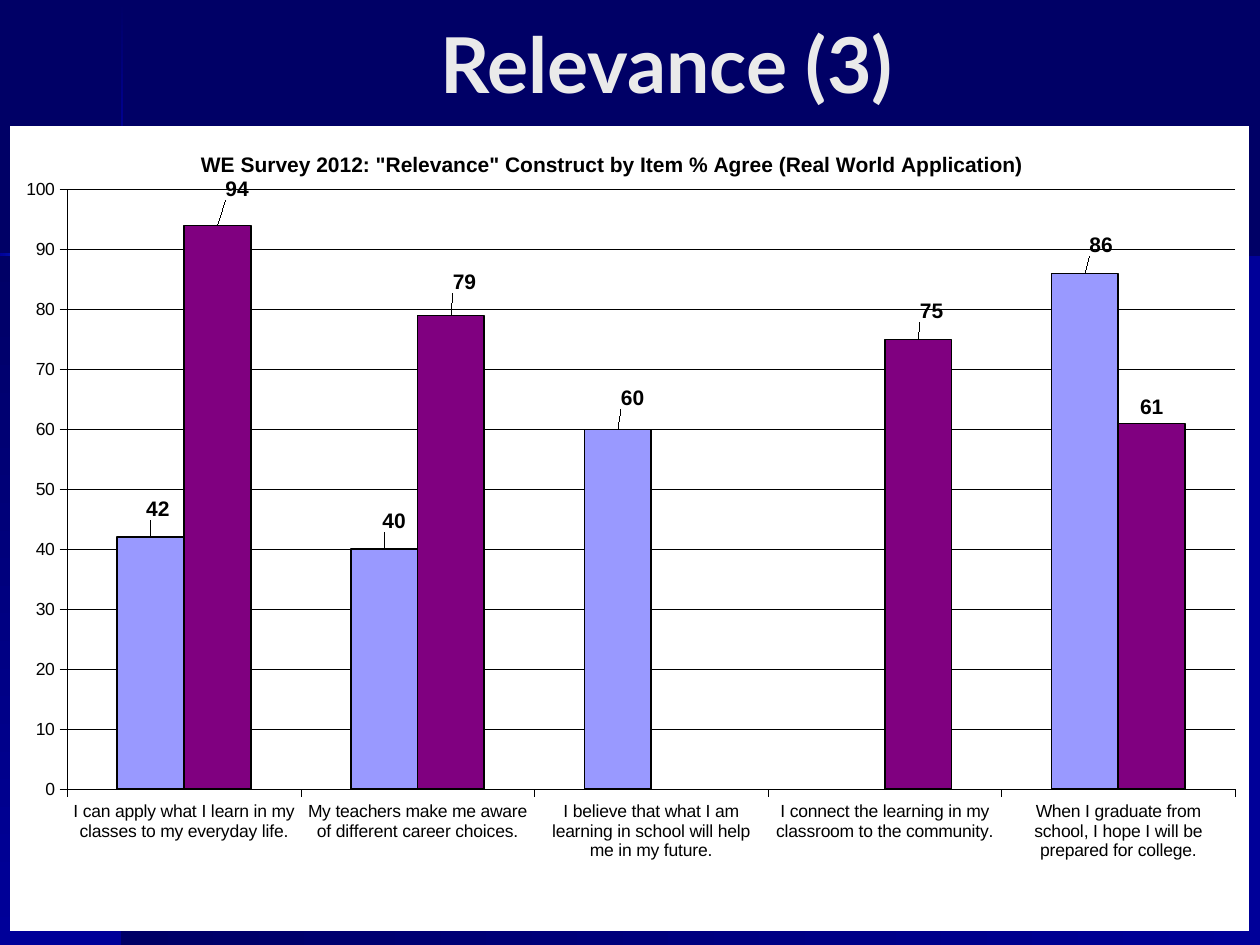
from lxml import etree
from pptx import Presentation
from pptx import util as u
from pptx.chart.data import CategoryChartData
from pptx.dml.color import RGBColor
from pptx.enum import chart as ch, shapes, text
from pptx.oxml import parse_xml
from pptx.oxml.ns import qn

NAMESPACES = (
    'xmlns:a="http://schemas.openxmlformats.org/drawingml/2006/main" '
    'xmlns:c="http://schemas.openxmlformats.org/drawingml/2006/chart"'
)
NAVY, BLUE, BRIGHT, CREAM = "000066", "000099", "0066FF", "FFFFCC"
GLOW = (BRIGHT, CREAM, BRIGHT)
DOWN, ACROSS = 90, 0

BACKDROP = [
    (69.8, 145.4, 650.2, 394.6, (NAVY, BLUE), ACROSS),
    (0, 145.4, 69.8, 394.6, (NAVY, BLUE), DOWN),
    (69.1, 0.7, 1.4, 86.4, (NAVY, BLUE), DOWN),
    (69.1, 203, 1.4, 337, (BLUE, NAVY), DOWN),
    (127.4, 144.7, 592.6, 1.4, (BLUE, NAVY), ACROSS),
    (69.1, 171.4, 1.4, 31.7, (BRIGHT, BLUE), DOWN),
    (69.1, 87.1, 1.4, 31.7, (BLUE, BRIGHT), DOWN),
    (69.1, 118.8, 1.4, 52.6, GLOW, DOWN),
    (0, 144.7, 43.9, 1.4, (BLUE, BRIGHT), ACROSS),
    (95.8, 144.7, 31.7, 1.4, (BRIGHT, BLUE), ACROSS),
    (43.2, 144.7, 52.6, 1.4, GLOW, ACROSS),
]

SURVEY_TITLE = 'WE Survey 2012: "Relevance" Construct by Item % Agree (Real World Application)'
STATEMENTS = [
    "I can apply what I learn in my classes to my everyday life.",
    "My teachers make me aware of different career choices.",
    "I believe that what I am learning in school will help me in my future.",
    "I connect the learning in my classroom to the community.",
    "When I graduate from school, I hope I will be prepared for college.",
]
SERIES = [
    ("Series 1", "9999FF", (42, 40, 60, None, 86),
     {0: (0.006, -0.015), 1: (0.008, -0.015), 2: (0.012, -0.019), 4: (0.013, -0.015)}),
    ("Series 2", "800080", (94, 79, None, 75, 61),
     {0: (0.016, -0.025), 1: (0.011, -0.021), 3: (0.011, -0.015)}),
]


def rgb(value):
    """Return the colour for a hex string."""
    return RGBColor.from_string(value)


def style(target, **values):
    """Set each given attribute on the target."""
    for name, value in values.items():
        setattr(target, name, value)


def style_font(font, size, colour="000000", face="Arial", bold=False):
    """Format a font."""
    style(font, size=u.Pt(size), name=face, bold=bold)
    font.color.rgb = rgb(colour)


def style_line(line, width):
    """Give a line a black stroke."""
    line.color.rgb = rgb("000000")
    line.width = u.Pt(width)


def add_band(slide, left, top, width, height, colours, angle):
    """Add a borderless rectangle with an evenly stepped gradient."""
    band = slide.shapes.add_shape(
        shapes.MSO_SHAPE.RECTANGLE, *map(u.Pt, (left, top, width, height)))
    band.shadow.inherit = False
    band.line.fill.background()
    band.fill.solid()
    stops = "".join(
        f'<a:gs pos="{i * 100000 // (len(colours) - 1)}"><a:srgbClr val="{colour}"/></a:gs>'
        for i, colour in enumerate(colours))
    properties = band._element.spPr
    properties.replace(properties.find(qn("a:solidFill")), parse_xml(
        f'<a:gradFill {NAMESPACES} rotWithShape="1"><a:gsLst>{stops}</a:gsLst>'
        f'<a:lin ang="{angle * 60000}" scaled="0"/></a:gradFill>'))


def add_heading(slide, wording):
    """Add the centred slide heading."""
    heading = slide.shapes.add_textbox(u.Pt(84), 0, u.Pt(594), u.Pt(72))
    frame = heading.text_frame
    style(frame, word_wrap=True, vertical_anchor=text.MSO_ANCHOR.MIDDLE)
    paragraph = frame.paragraphs[0]
    paragraph.alignment = text.PP_ALIGN.CENTER
    run = paragraph.add_run()
    run.text = wording
    style_font(run.font, 44, "EAEAEA", "Lato", True)


def set_layout(parent, index, modes, **extent):
    """Replace the manual layout of a chart part."""
    for old in parent.findall(qn("c:layout")):
        parent.remove(old)
    layout = parse_xml(f"<c:layout {NAMESPACES}><c:manualLayout/></c:layout>")
    for name, value in {**modes, **extent}.items():
        etree.SubElement(layout[0], qn(f"c:{name}")).set("val", str(value))
    parent.insert(index, layout)


def format_axis(axis):
    """Give an axis thin black lines and small labels."""
    style(axis, major_tick_mark=ch.XL_TICK_MARK.OUTSIDE,
          minor_tick_mark=ch.XL_TICK_MARK.NONE,
          tick_label_position=ch.XL_TICK_LABEL_POSITION.LOW)
    style_font(axis.tick_labels.font, 10)
    style_line(axis.format.line, 0.25)


def format_series(series, colour, offsets):
    """Colour the bars and shift their value labels."""
    series.format.fill.solid()
    series.format.fill.fore_color.rgb = rgb(colour)
    style_line(series.format.line, 1)
    series.invert_if_negative = False
    labels = series.data_labels
    style(labels, show_value=True, position=ch.XL_LABEL_POSITION.OUTSIDE_END)
    style_font(labels.font, 12, bold=True)
    for index, (x, y) in offsets.items():
        label = series.points[index].data_label
        style_font(label.font, 12, bold=True)
        label.position = ch.XL_LABEL_POSITION.OUTSIDE_END
        element = series._element.xpath(f'.//c:dLbl[c:idx/@val="{index}"]')[0]
        set_layout(element, 1, {}, x=x, y=y)


def add_survey_chart(slide):
    """Add the clustered column chart of survey agreement."""
    data = CategoryChartData()
    data.categories = STATEMENTS
    for name, _, values, _ in SERIES:
        data.add_series(name, values)
    chart = slide.shapes.add_chart(
        ch.XL_CHART_TYPE.COLUMN_CLUSTERED,
        *map(u.Pt, (5.8, 72, 707.8, 460)), data).chart
    style_font(chart.font, 10)
    chart.has_legend = False
    chart._chartSpace.find(qn("c:chart")).addnext(parse_xml(
        f'<c:spPr {NAMESPACES}><a:solidFill><a:srgbClr val="FFFFFF"/></a:solidFill>'
        "<a:ln><a:noFill/></a:ln></c:spPr>"))

    title = chart.chart_title
    title.text_frame.text = SURVEY_TITLE
    style_font(title.text_frame.paragraphs[0].runs[0].font, 12, bold=True)
    edges = {"xMode": "edge", "yMode": "edge"}
    set_layout(title._element, 1, edges, x=0.151, y=0.027)
    plot_area = chart._chartSpace.find(".//" + qn("c:plotArea"))
    set_layout(plot_area, 0, {"layoutTarget": "inner", **edges},
               x=0.046, y=0.079, w=0.943, h=0.745)

    format_axis(chart.category_axis)
    format_axis(chart.value_axis)
    style(chart.value_axis, minimum_scale=0, maximum_scale=100, major_unit=10)
    style_line(chart.value_axis.major_gridlines.format.line, 0.25)
    plot = chart.plots[0]
    style(plot, gap_width=150, overlap=0, vary_by_categories=False)
    for series, (_, colour, _, offsets) in zip(plot.series, SERIES):
        format_series(series, colour, offsets)


def main():
    """Build and save the slide."""
    deck = Presentation()
    style(deck, slide_width=u.Pt(720), slide_height=u.Pt(540))
    slide = deck.slides.add_slide(deck.slide_layouts[6])
    slide.background.fill.solid()
    slide.background.fill.fore_color.rgb = rgb(NAVY)
    for band in BACKDROP:
        add_band(slide, *band)
    add_heading(slide, "Relevance (3)")
    add_survey_chart(slide)
    deck.save("out.pptx")


if __name__ == "__main__":
    main()
